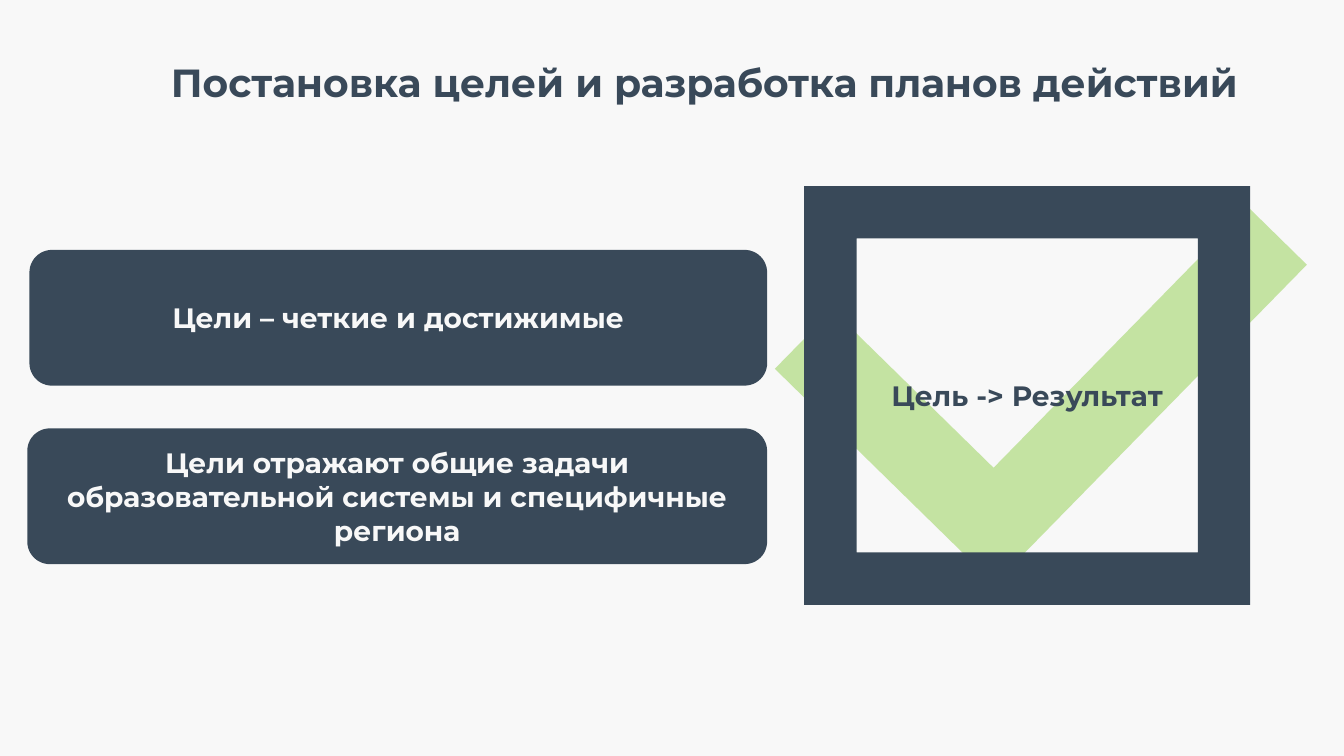
import pptx
import pptx.util
import pptx.dml.color
import pptx.enum.shapes
import pptx.enum.text
import pptx.oxml.ns
from lxml import etree

Pt = pptx.util.Pt
SHAPES = pptx.enum.shapes.MSO_SHAPE
COLORS = {"dark": "394959", "light": "F8F8F8", "green": "92D050"}
FONT = "Montserrat"
TITLE = ("Постановка целей и разработка планов действий", (113, 38, 780, 41))
GOALS = [
    ("Цели – четкие и достижимые", (21, 178.5, 527, 97)),
    ("Цели отражают общие задачи образовательной системы и специфичные региона", (19.5, 306, 528.5, 97)),
]
CHECK_BOX = (584, 116.5, 319, 219.5)
CHECK_ANGLE = 314.4
CHECK_ARMS = (0.266, 0.268)
CHECK_OPACITY = 51
FRAME = ("Цель -> Результат", (574.5, 133, 318.5, 299))


def rgb(name):
    """Return a palette colour."""
    return pptx.dml.color.RGBColor.from_string(COLORS[name])


def write(sp, text, size, color):
    """Put one centred bold paragraph into a shape."""
    tf = sp.text_frame
    tf.word_wrap = True
    p = tf.paragraphs[0]
    p.text = text
    p.alignment = pptx.enum.text.PP_ALIGN.CENTER
    p.font.name = FONT
    p.font.size = Pt(size)
    p.font.bold = True
    p.font.color.rgb = rgb(color)


def add_filled(s, kind, box, color):
    """Add a flat shape without an outline."""
    sp = s.shapes.add_shape(kind, *map(Pt, box))
    sp.shadow.inherit = False
    sp.fill.solid()
    sp.fill.fore_color.rgb = rgb(color)
    sp.line.fill.background()
    sp.text_frame.vertical_anchor = pptx.enum.text.MSO_ANCHOR.MIDDLE
    return sp


def add_check(s):
    """Add the translucent tick as a rotated corner shape."""
    sp = add_filled(s, SHAPES.HALF_FRAME, CHECK_BOX, "green")
    sp.rotation = CHECK_ANGLE
    for i, arm in enumerate(CHECK_ARMS):
        sp.adjustments[i] = arm
    qn = pptx.oxml.ns.qn
    sp.element.spPr.find(qn("a:prstGeom")).set("prst", "corner")
    color = sp.element.spPr.find(qn("a:solidFill")).find(qn("a:srgbClr"))
    etree.SubElement(color, qn("a:alpha"), val=str(CHECK_OPACITY * 1000))


def main():
    """Build the goal-setting slide."""
    prs = pptx.Presentation()
    prs.slide_width, prs.slide_height = Pt(960), Pt(540)
    s = prs.slides.add_slide(prs.slide_layouts[6])
    s.background.fill.solid()
    s.background.fill.fore_color.rgb = rgb("light")

    text, box = TITLE
    write(s.shapes.add_textbox(*map(Pt, box)), text, 28, "dark")
    for text, box in GOALS:
        write(add_filled(s, SHAPES.ROUNDED_RECTANGLE, box, "dark"), text, 20, "light")
    add_check(s)
    text, box = FRAME
    write(add_filled(s, SHAPES.FRAME, box, "dark"), text, 20, "dark")
    prs.save("out.pptx")


if __name__ == "__main__":
    main()
